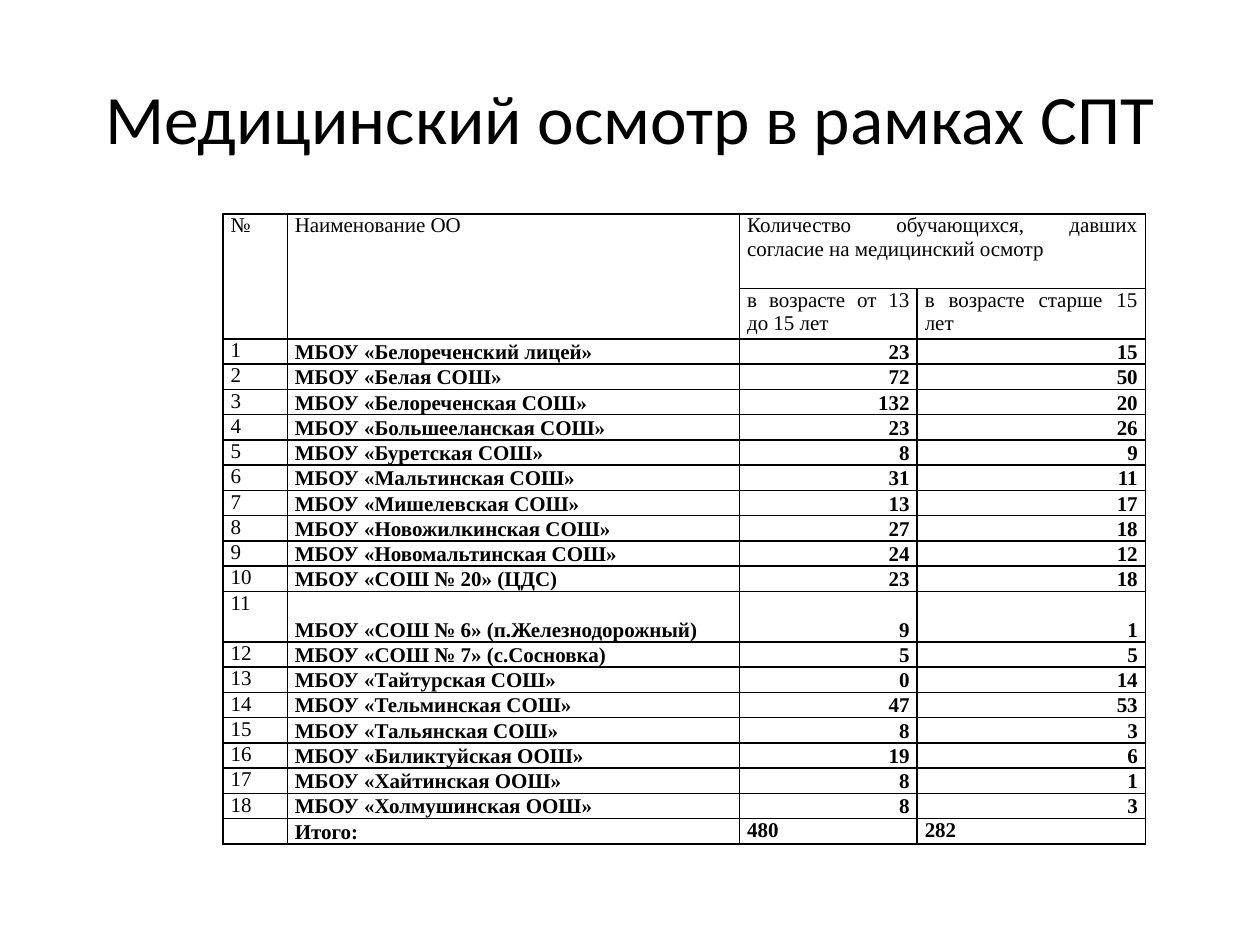
from dataclasses import dataclass
from typing import Any

from lxml.etree import SubElement
from pptx import Presentation
from pptx.dml.color import RGBColor
from pptx.enum.text import MSO_ANCHOR as Anchor, PP_ALIGN as Align
from pptx.oxml.ns import qn
from pptx.util import Inches, Pt

BLACK = RGBColor(0, 0, 0)
SIZE = 12
COLS = [0.51, 3.59, 1.41, 1.81]
HEAD = [0.59, 0.4]
ROW, TALL = 0.2, 0.4
PAD = {
    "margin_left": Inches(0.06),
    "margin_right": Inches(0.06),
    "margin_top": 0,
    "margin_bottom": 0,
}


@dataclass
class School:
    name: str
    young: int
    old: int
    high: float = ROW


@dataclass
class Style:
    align: Align = Align.JUSTIFY
    anchor: Anchor = Anchor.TOP
    bold: bool = False


PLAIN = Style()
NAME = Style(Align.LEFT, Anchor.BOTTOM, True)
COUNT = Style(Align.RIGHT, Anchor.BOTTOM, True)
TOTAL = Style(bold=True)

SCHOOLS = [
    School("Белореченский лицей»", 23, 15),
    School("Белая СОШ»", 72, 50),
    School("Белореченская СОШ»", 132, 20),
    School("Большееланская СОШ»", 23, 26),
    School("Буретская СОШ»", 8, 9),
    School("Мальтинская СОШ»", 31, 11),
    School("Мишелевская СОШ»", 13, 17),
    School("Новожилкинская СОШ»", 27, 18),
    School("Новомальтинская СОШ»", 24, 12),
    School("СОШ № 20» (ЦДС)", 23, 18),
    School("СОШ № 6» (п.Железнодорожный)", 9, 1, TALL),
    School("СОШ № 7» (с.Сосновка)", 5, 5),
    School("Тайтурская СОШ»", 0, 14),
    School("Тельминская СОШ»", 47, 53),
    School("Тальянская СОШ»", 8, 3),
    School("Биликтуйская ООШ»", 19, 6),
    School("Хайтинская ООШ»", 8, 1),
    School("Холмушинская ООШ»", 8, 3),
]


def apply(item: Any, values: dict[str, Any]) -> None:
    for key, value in values.items():
        setattr(item, key, value)


def write(para: Any, text: str, face: str, size: float, bold: bool = False) -> None:
    run = para.add_run()
    run.text = text
    apply(run.font, {"name": face, "size": Pt(size), "bold": bold})
    run.font.color.rgb = BLACK


def frame(cell: Any) -> None:
    props = cell._tc.get_or_add_tcPr()
    for side in ("a:lnL", "a:lnR", "a:lnT", "a:lnB"):
        line = SubElement(props, qn(side), w=str(Pt(1)))
        fill = SubElement(line, qn("a:solidFill"))
        SubElement(fill, qn("a:srgbClr"), val=str(BLACK))
    cell.fill.background()
    apply(cell, PAD)
    para = cell.text_frame.paragraphs[0]
    SubElement(para._p, qn("a:endParaRPr"), sz=str(SIZE * 100))


def put(cell: Any, text: str, style: Style) -> None:
    cell.vertical_anchor = style.anchor
    para = cell.text_frame.paragraphs[0]
    para.alignment = style.align
    write(para, text, "Times New Roman", SIZE, style.bold)


def add_title(slide: Any, text: str) -> None:
    box = slide.shapes.add_textbox(Inches(0.5), Inches(0.3), Inches(9), Inches(1.25))
    apply(box.text_frame, {"word_wrap": True, "vertical_anchor": Anchor.MIDDLE})
    para = box.text_frame.paragraphs[0]
    para.alignment = Align.CENTER
    write(para, text, "Calibri", 39.6)


def add_grid(slide: Any) -> None:
    highs = HEAD + [school.high for school in SCHOOLS] + [ROW]
    table = slide.shapes.add_table(
        len(highs), len(COLS), Inches(1.77), Inches(1.7),
        Inches(sum(COLS)), Inches(sum(highs)),
    ).table
    apply(table, {"first_row": False, "horz_banding": False})
    for col, width in zip(table.columns, COLS):
        col.width = Inches(width)
    for row, high in zip(table.rows, highs):
        row.height = Inches(high)
    for cell in table.iter_cells():
        frame(cell)

    for start, end in (((0, 0), (1, 0)), ((0, 1), (1, 1)), ((0, 2), (0, 3))):
        table.cell(*start).merge(table.cell(*end))
    heads = {
        (0, 0): "№",
        (0, 1): "Наименование ОО",
        (0, 2): "Количество обучающихся, давших согласие на медицинский осмотр",
        (1, 2): "в возрасте от 13 до 15 лет",
        (1, 3): "в возрасте старше 15 лет",
    }
    for place, text in heads.items():
        put(table.cell(*place), text, PLAIN)

    for num, school in enumerate(SCHOOLS, 1):
        texts = (num, f"МБОУ «{school.name}", school.young, school.old)
        for col, (text, style) in enumerate(zip(texts, (PLAIN, NAME, COUNT, COUNT))):
            put(table.cell(num + 1, col), str(text), style)

    last = len(highs) - 1
    put(table.cell(last, 1), "Итого:", NAME)
    put(table.cell(last, 2), str(sum(school.young for school in SCHOOLS)), TOTAL)
    put(table.cell(last, 3), str(sum(school.old for school in SCHOOLS)), TOTAL)


def main() -> None:
    deck = Presentation()
    apply(deck, {"slide_width": Inches(10), "slide_height": Inches(7.5)})
    slide = deck.slides.add_slide(deck.slide_layouts[6])
    add_title(slide, "Медицинский осмотр в рамках СПТ")
    add_grid(slide)
    deck.save("out.pptx")


if __name__ == "__main__":
    main()
